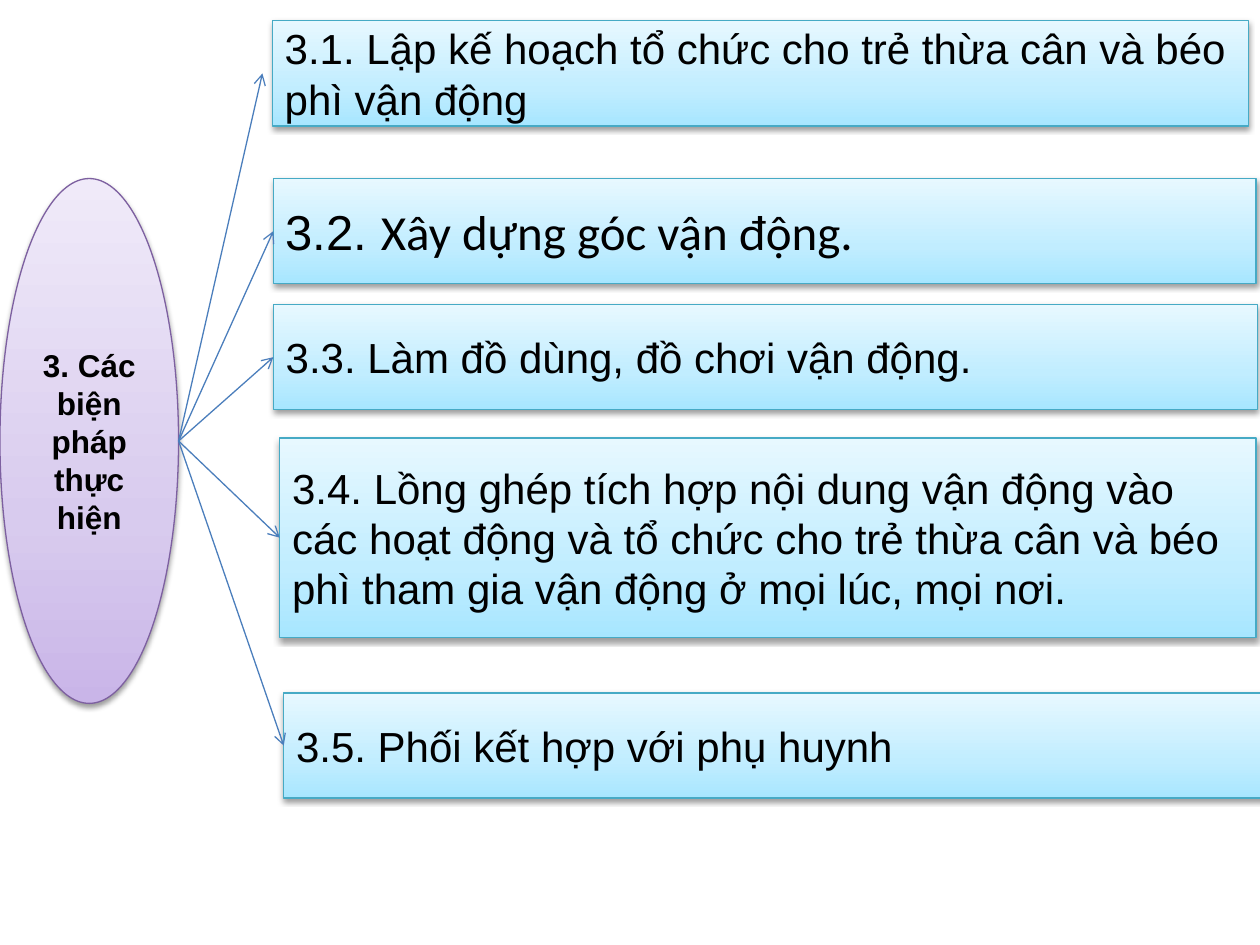
"""Build a slide that links an oval topic to five exercise measures."""
from copy import deepcopy

from pptx import Presentation
from pptx.dml.color import RGBColor
from pptx.enum.shapes import MSO_CONNECTOR, MSO_SHAPE
from pptx.enum.text import MSO_ANCHOR, PP_ALIGN
from pptx.oxml import parse_xml
from pptx.oxml.ns import nsdecls, qn
from pptx.util import Cm, Pt

COLORS = {
    "text": "000000",
    "arrow": "4B7EBC",
    "topic line": "7D60A0",
    "topic": ["C9B5E8", "D8CBEE", "F0EAF9"],
    "measure line": "46AAC5",
    "measure": ["A7E6FF", "C1EDFF", "E7F8FF"],
}
STOPS = [0, 0.35, 1]
SHADOW = (
    f'<a:outerShdw {nsdecls("a")} blurRad="40000" dist="20000" dir="5400000" rotWithShape="0">'
    '<a:srgbClr val="000000"><a:alpha val="38000"/></a:srgbClr></a:outerShdw>'
)
MEASURES = [
    (5.49, 0.42, 19.68, 2.12, 24,
     [("3.1. Lập kế hoạch tổ chức cho trẻ thừa cân và béo phì vận động", "Arial")]),
    (5.51, 3.6, 19.81, 2.12, 28,
     [("3.2. ", "Arial"), ("Xây dựng góc vận động.", "Calibri")]),
    (5.51, 6.14, 19.84, 2.12, 24,
     [("3.3. Làm đồ dùng, đồ chơi vận động.", "Arial")]),
    (5.64, 8.83, 19.68, 4.02, 24,
     [("3.4. Lồng ghép tích hợp nội dung vận động vào các hoạt động và tổ chức "
       "cho trẻ thừa cân và béo phì tham gia vận động ở mọi lúc, mọi nơi.", "Arial")]),
    (5.72, 13.97, 19.89, 2.12, 24,
     [("3.5. Phối kết hợp với phụ huynh", "Arial")]),
]


def add_panel(slide, kind, bounds, style, size, runs, alignment, bold=False):
    shape = slide.shapes.add_shape(kind, *[Cm(value) for value in bounds])
    shape.fill.gradient()
    shape.fill.gradient_angle = 90
    stop_list = shape.element.spPr.find(qn("a:gradFill")).find(qn("a:gsLst"))
    stop_list.append(deepcopy(stop_list[-1]))
    for stop, position, color in zip(shape.fill.gradient_stops, STOPS, COLORS[style]):
        stop.position = position
        stop.color.rgb = RGBColor.from_string(color)
    shape.line.color.rgb = RGBColor.from_string(COLORS[style + " line"])
    shape.line.width = Pt(0.75)
    shape.shadow.inherit = False
    shape.element.spPr.find(qn("a:effectLst")).append(parse_xml(SHADOW))
    shape.text_frame.word_wrap = True
    shape.text_frame.vertical_anchor = MSO_ANCHOR.MIDDLE
    paragraph = shape.text_frame.paragraphs[0]
    paragraph.alignment = alignment
    for text, font_name in runs:
        run = paragraph.add_run()
        run.text = text
        run.font.name = font_name
        run.font.size = Pt(size)
        run.font.bold = bold
        run.font.color.rgb = RGBColor.from_string(COLORS["text"])
    return shape


presentation = Presentation()
presentation.slide_width = Cm(25.4)
presentation.slide_height = Cm(19.05)
slide = presentation.slides.add_slide(presentation.slide_layouts[6])

topic = add_panel(slide, MSO_SHAPE.OVAL, (0, 3.6, 3.6, 10.58), "topic", 18,
                  [("3. Các biện pháp thực hiện", "Arial")], PP_ALIGN.CENTER, bold=True)

for number, (left, top, width, height, size, runs) in enumerate(MEASURES):
    measure = add_panel(slide, MSO_SHAPE.RECTANGLE, (left, top, width, height),
                        "measure", size, runs, PP_ALIGN.LEFT)
    arrow = slide.shapes.add_connector(
        MSO_CONNECTOR.STRAIGHT, topic.left + topic.width, topic.top + topic.height // 2,
        Cm(5.29), Cm(top + height / 2))
    if number > 0:
        arrow.end_connect(measure, 1)
    arrow.line.color.rgb = RGBColor.from_string(COLORS["arrow"])
    arrow.line.width = Pt(0.75)
    properties = arrow._element.spPr
    properties.find(qn("a:ln")).append(parse_xml(f'<a:tailEnd {nsdecls("a")} type="arrow"/>'))
    properties.append(parse_xml(f'<a:effectLst {nsdecls("a")}/>'))

presentation.save("out.pptx")
